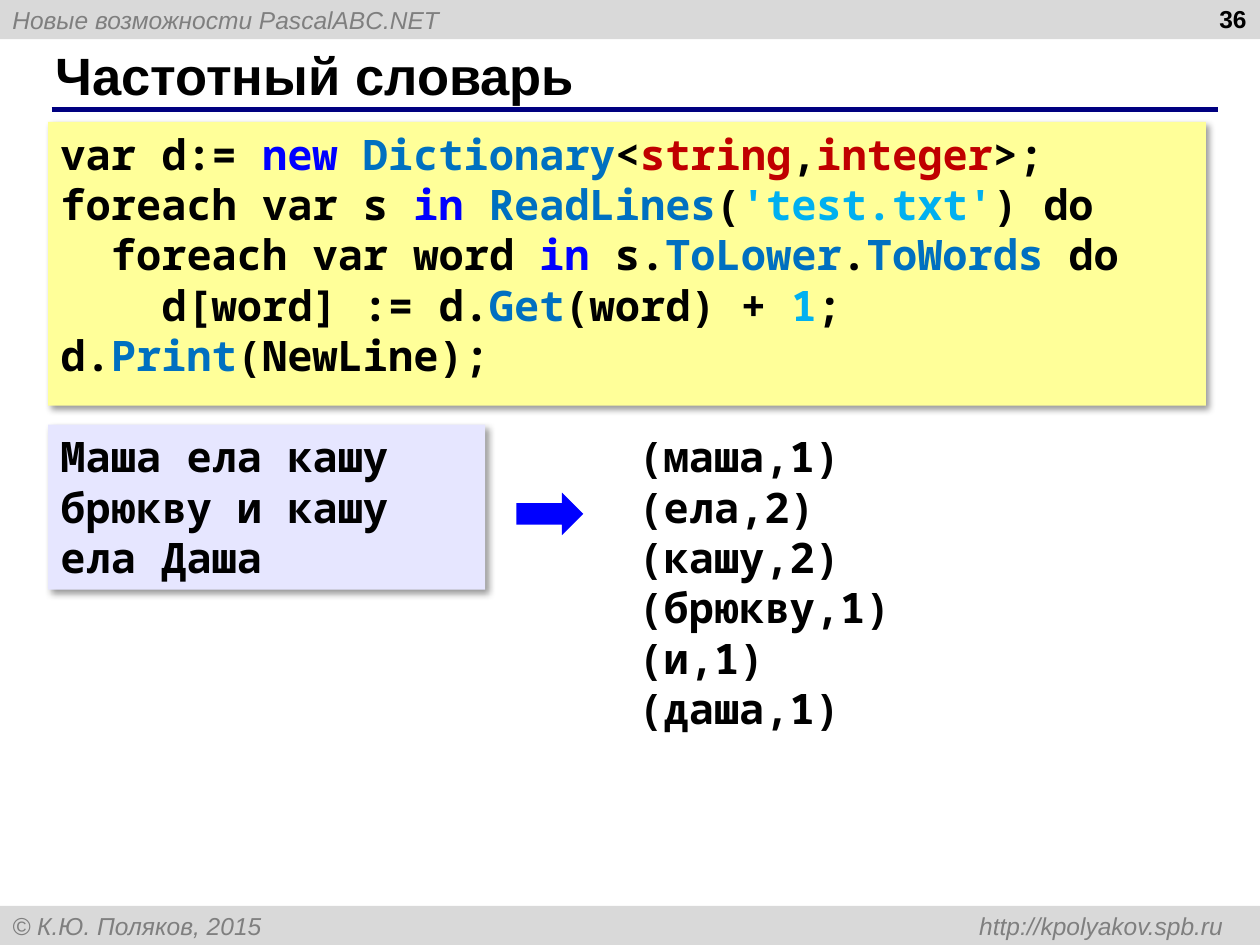
from dataclasses import dataclass
from typing import NamedTuple

import lxml.etree
import pptx
import pptx.dml.color
import pptx.enum.shapes
import pptx.enum.text
import pptx.oxml
import pptx.oxml.ns
import pptx.util

Cm, Pt = pptx.util.Cm, pptx.util.Pt
KIND = pptx.enum.shapes.MSO_SHAPE
ALIGN = pptx.enum.text.PP_ALIGN
ANCHOR = pptx.enum.text.MSO_ANCHOR
qn = pptx.oxml.ns.qn

WIDE, HIGH, BAND = 25.4, 19.05, 0.79
LEFT = 0.97
BLACK, GREY, NAVY = "000000", "7F7F7F", "000080"
BLUE, TEAL, RED, SKY = "0000FF", "0070C0", "C00000", "00B0F0"


class Span(NamedTuple):
    text: str
    color: str = BLACK


class Area(NamedTuple):
    left: float
    top: float
    width: float
    height: float


@dataclass
class Style:
    face: str
    size: float
    color: str = BLACK
    bold: bool = False
    slant: bool = False


@dataclass
class Box:
    area: Area
    lines: list[list[Span]]
    fill: str | None = None


HEAD = Style("Arial", 30, bold=True)
PAGE = Style("Arial", 14, bold=True)
NOTE = Style("Arial", 14, GREY, slant=True)
CODE = Style("Noto Sans Mono", 24, bold=True)

BANDS = [
    (0, "Новые возможности PascalABC.NET"),
    (HIGH - BAND, "© К.Ю. Поляков, 2015\thttp://kpolyakov.spb.ru"),
]

BOXES = [
    Box(Area(LEFT, 2.46, 23.34, 5.72), [
        [Span("var d:= "), Span("new ", BLUE), Span("Dictionary", TEAL),
         Span("<"), Span("string", RED), Span(","), Span("integer", RED),
         Span(">;")],
        [Span("foreach var s "), Span("in ", BLUE), Span("ReadLines", TEAL),
         Span("("), Span("'test.txt'", SKY), Span(") do")],
        [Span("  foreach var word "), Span("in ", BLUE), Span("s."),
         Span("ToLower", TEAL), Span("."), Span("ToWords", TEAL),
         Span(" do")],
        [Span("    d[word] := d."), Span("Get", TEAL), Span("(word) + "),
         Span("1", SKY), Span(";")],
        [Span("d."), Span("Print", TEAL), Span("(NewLine);")],
    ], "FFFF99"),
    Box(Area(LEFT, 8.56, 8.81, 3.33),
        [[Span("Маша ела кашу")], [Span("брюкву и кашу ела Даша")]],
        "E6E6FF"),
    Box(Area(12.62, 8.56, 6.22, 6.4),
        [[Span(f"({word},{count})")] for word, count in [
            ("маша", 1), ("ела", 2), ("кашу", 2),
            ("брюкву", 1), ("и", 1), ("даша", 1)]]),
]


def paint(format, color: str) -> None:
    """Set the colour of a font, or of a solid fill or line."""
    if hasattr(format, "solid"):
        format.solid()
        format = format.fore_color
    else:
        format = format.color
    format.rgb = pptx.dml.color.RGBColor.from_string(color)


def dress(run, style: Style, color: str | None = None) -> None:
    """Apply a text style to a run."""
    font = run.font
    font.name, font.size = style.face, Pt(style.size)
    font.bold, font.italic = style.bold, style.slant
    paint(font, color or style.color)


def label(shape, text: str, style: Style, align=ALIGN.LEFT,
          anchor=ANCHOR.MIDDLE):
    """Write one line in a shape and return its paragraph."""
    frame = shape.text_frame
    frame.text = text
    frame.word_wrap = True
    frame.vertical_anchor = anchor
    para = frame.paragraphs[0]
    para.alignment = align
    for run in para.runs:
        dress(run, style)
    return para


def block(slide, kind, area: Area, fill: str):
    """Add a filled shape with no outline and no shadow."""
    shape = slide.shapes.add_shape(kind, *map(Cm, area))
    shape.shadow.inherit = False
    paint(shape.fill, fill)
    shape.line.fill.background()
    return shape


def shade(shape) -> None:
    """Give a block a soft drop shadow."""
    effects = shape._element.spPr.find(qn("a:effectLst"))
    drop = lxml.etree.SubElement(
        effects, qn("a:outerShdw"), blurRad=str(Pt(4)), dist=str(Pt(3)),
        dir="2700000", algn="tl", rotWithShape="0")
    tint = lxml.etree.SubElement(drop, qn("a:srgbClr"), val=BLACK)
    lxml.etree.SubElement(tint, qn("a:alpha"), val="40000")


def draw_box(slide, box: Box) -> None:
    if box.fill:
        shape = block(slide, KIND.RECTANGLE, box.area, box.fill)
        shade(shape)
    else:
        shape = slide.shapes.add_textbox(*map(Cm, box.area))
    frame = shape.text_frame
    frame.word_wrap = True
    frame.vertical_anchor = ANCHOR.TOP
    for index, line in enumerate(box.lines):
        para = frame.add_paragraph() if index else frame.paragraphs[0]
        para.alignment = ALIGN.LEFT
        for span in line:
            run = para.add_run()
            run.text = span.text
            dress(run, CODE, span.color)


def draw_bands(slide) -> None:
    for top, text in BANDS:
        band = block(slide, KIND.RECTANGLE, Area(0, top, WIDE, BAND), "D9D9D9")
        para = label(band, text, NOTE)
        if "\t" in text:
            tabs = lxml.etree.SubElement(
                para._p.get_or_add_pPr(), qn("a:tabLst"))
            lxml.etree.SubElement(
                tabs, qn("a:tab"), pos=str(Cm(24.41)), algn="r")


def draw_rule(slide) -> None:
    rule = slide.shapes.add_connector(
        pptx.enum.shapes.MSO_CONNECTOR.STRAIGHT,
        Cm(1.04), Cm(2.21), Cm(24.56), Cm(2.21))
    paint(rule.line.fill, NAVY)
    rule.line.width = Pt(3)
    lxml.etree.SubElement(rule._element.spPr, qn("a:effectLst"))


def draw_title(slide) -> None:
    title = slide.shapes.title
    title.left, title.top, title.width, title.height = map(
        Cm, Area(0.86, 0.84, 23.27, 1.32))
    label(title, "Частотный словарь", HEAD)
    title.text_frame.auto_size = pptx.enum.text.MSO_AUTO_SIZE.NONE


def main() -> None:
    deck = pptx.Presentation()
    deck.slide_width, deck.slide_height = Cm(WIDE), Cm(HIGH)
    slide = deck.slides.add_slide(deck.slide_layouts[5])
    draw_bands(slide)
    draw_rule(slide)
    draw_title(slide)
    page = slide.shapes.add_textbox(*map(Cm, Area(19.46, -0.05, 5.92, 1.32)))
    label(page, "36", PAGE, ALIGN.RIGHT, ANCHOR.TOP)
    for box in BOXES:
        draw_box(slide, box)
    block(slide, KIND.RIGHT_ARROW, Area(10.41, 9.93, 1.35, 0.86), BLUE)
    deck.save("out.pptx")


if __name__ == "__main__":
    main()
